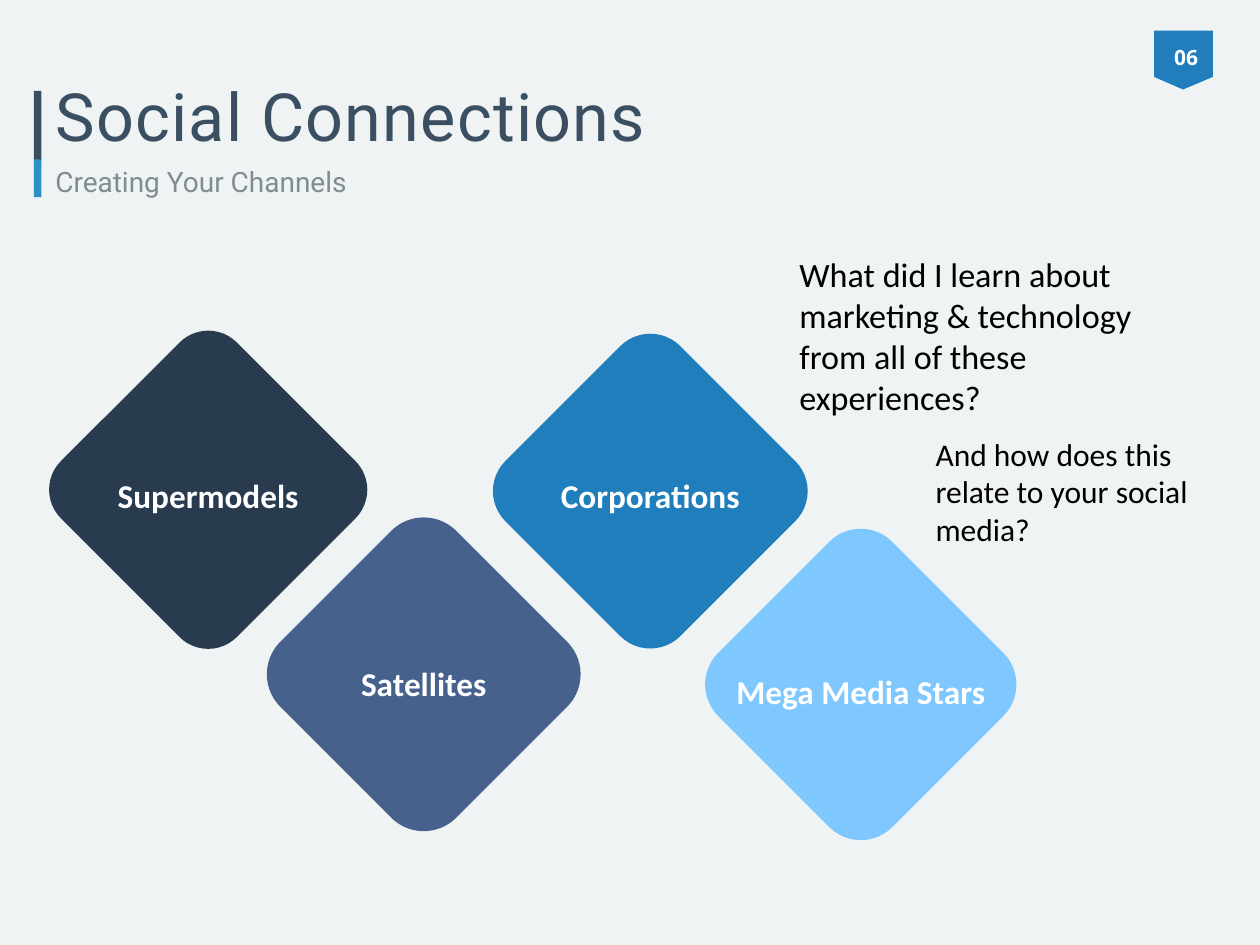
from pptx import Presentation
from pptx.dml.color import RGBColor
from pptx.enum.shapes import MSO_SHAPE
from pptx.enum.text import MSO_ANCHOR, MSO_AUTO_SIZE, PP_ALIGN
from pptx.util import Cm, Pt

RECTANGLE, ROUNDED = MSO_SHAPE.RECTANGLE, MSO_SHAPE.ROUNDED_RECTANGLE
LEFT, CENTER = PP_ALIGN.LEFT, PP_ALIGN.CENTER
TOP, MIDDLE = MSO_ANCHOR.TOP, MSO_ANCHOR.MIDDLE
NO_AUTOFIT = MSO_AUTO_SIZE.NONE

CHANNELS = [
    ("Supermodels", 3.38, 14.73, 10.03, 0.163, "283B4F", 18.85, 7.65),
    ("Satellites", 12.07, 22.17, 10.03, 0.185, "46618B", 26.44, 7.65),
    ("Mega Media Stars", 29.74, 22.63, 9.93, 0.181, "7FC8FF", 26.75, 10.54),
    ("Corporations", 21.23, 14.81, 9.98, 0.172, "1F7EBB", 18.85, 7.65),
]


def rgb(color):
    """Turn a hex string into a colour."""
    return RGBColor.from_string(color)


def paint(shape, color):
    """Give a shape a plain fill without outline or shadow."""
    shape.fill.solid()
    shape.fill.fore_color.rgb = rgb(color)
    shape.line.fill.background()
    shape.shadow.inherit = False


def write(box, text, size, font, color, bold=False, align=LEFT, anchor=MIDDLE, inset=0.15):
    """Write one formatted run into a box and return the run."""
    frame = box.text_frame
    frame.word_wrap = True
    frame.auto_size = NO_AUTOFIT
    frame.vertical_anchor = anchor
    frame.margin_left = frame.margin_right = Cm(inset)
    frame.margin_top = frame.margin_bottom = Cm(inset)
    paragraph = frame.paragraphs[0]
    paragraph.alignment = align
    paragraph.space_before = Pt(0)
    run = paragraph.add_run()
    run.text = text
    run.font.size = Pt(size)
    run.font.name = font
    run.font.bold = bold
    run.font.color.rgb = rgb(color)
    return run


def place(holder, left, top, width, height):
    """Move a placeholder to a position given in centimetres."""
    holder.left, holder.top = Cm(left), Cm(top)
    holder.width, holder.height = Cm(width), Cm(height)


def add_box(slide, left, top, width, height):
    """Add an empty text box placed in centimetres."""
    return slide.shapes.add_textbox(Cm(left), Cm(top), Cm(width), Cm(height))


def add_heading(slide):
    """Fill the title and subtitle and add the two-tone bar beside them."""
    title, subtitle = slide.shapes.title, slide.placeholders[1]
    place(title, 2.08, 2.92, 25.27, 3.45)
    title_run = write(title, "Social Connections", 76, "Roboto", "3A4F62")
    title_run.font._element.set("spc", "150")
    place(subtitle, 2.08, 6.5, 14.3, 1.6)
    write(subtitle, "Creating Your Channels", 32, "Roboto", "808D8E")
    for top, height, color in [(3.66, 2.82, "3A4F62"), (6.43, 1.52, "2B92C5")]:
        bar = slide.shapes.add_shape(RECTANGLE, Cm(1.37), Cm(top), Cm(0.3), Cm(height))
        paint(bar, color)


def add_page_badge(slide, number):
    """Draw the pointed badge with the page number."""
    corners = [(48.9, 1.24), (48.9, 3.1), (47.7, 3.61), (46.53, 3.1)]
    outline = slide.shapes.build_freeform(Cm(46.53), Cm(1.24))
    outline.add_line_segments([(Cm(x), Cm(y)) for x, y in corners], close=True)
    paint(outline.convert_to_shape(), "1F7EBB")
    number_box = add_box(slide, 47.02, 1.57, 1.6, 1.45)
    write(number_box, number, 24, "Open Sans", "FFFFFF", True, CENTER)


def add_channel(slide, name, left, top, side, rounding, color, label_top, label_width):
    """Draw a rounded diamond with an upright label centred across it."""
    diamond = slide.shapes.add_shape(ROUNDED, Cm(left), Cm(top), Cm(side), Cm(side))
    diamond.adjustments[0] = rounding
    diamond.rotation = 315
    paint(diamond, color)
    label = add_box(slide, left + (side - label_width) / 2, label_top, label_width, 4.72)
    write(label, name, 38, "Calibri", "FFFFFF", True, CENTER, TOP, 0)
    label.text_frame.paragraphs[0].line_spacing = 1.2


def add_question(slide, text, size, left, top, width, height):
    """Add a question in black text."""
    write(add_box(slide, left, top, width, height), text, size, "Calibri", "000000")


def main():
    """Build the slide and save it."""
    deck = Presentation()
    deck.slide_width, deck.slide_height = Cm(50.8), Cm(38.1)
    slide = deck.slides.add_slide(deck.slide_layouts[0])
    slide.background.fill.solid()
    slide.background.fill.fore_color.rgb = rgb("EFF3F4")
    add_heading(slide)
    add_page_badge(slide, "06")
    for channel in CHANNELS:
        add_channel(slide, *channel)
    add_question(slide, "What did I learn about marketing & technology from all of these experiences?",
                 39, 32.08, 10.21, 15.9, 6.63)
    add_question(slide, "And how does this relate to your social media?",
                 36, 37.57, 17.5, 12.24, 4.62)
    deck.save("out.pptx")


if __name__ == "__main__":
    main()
